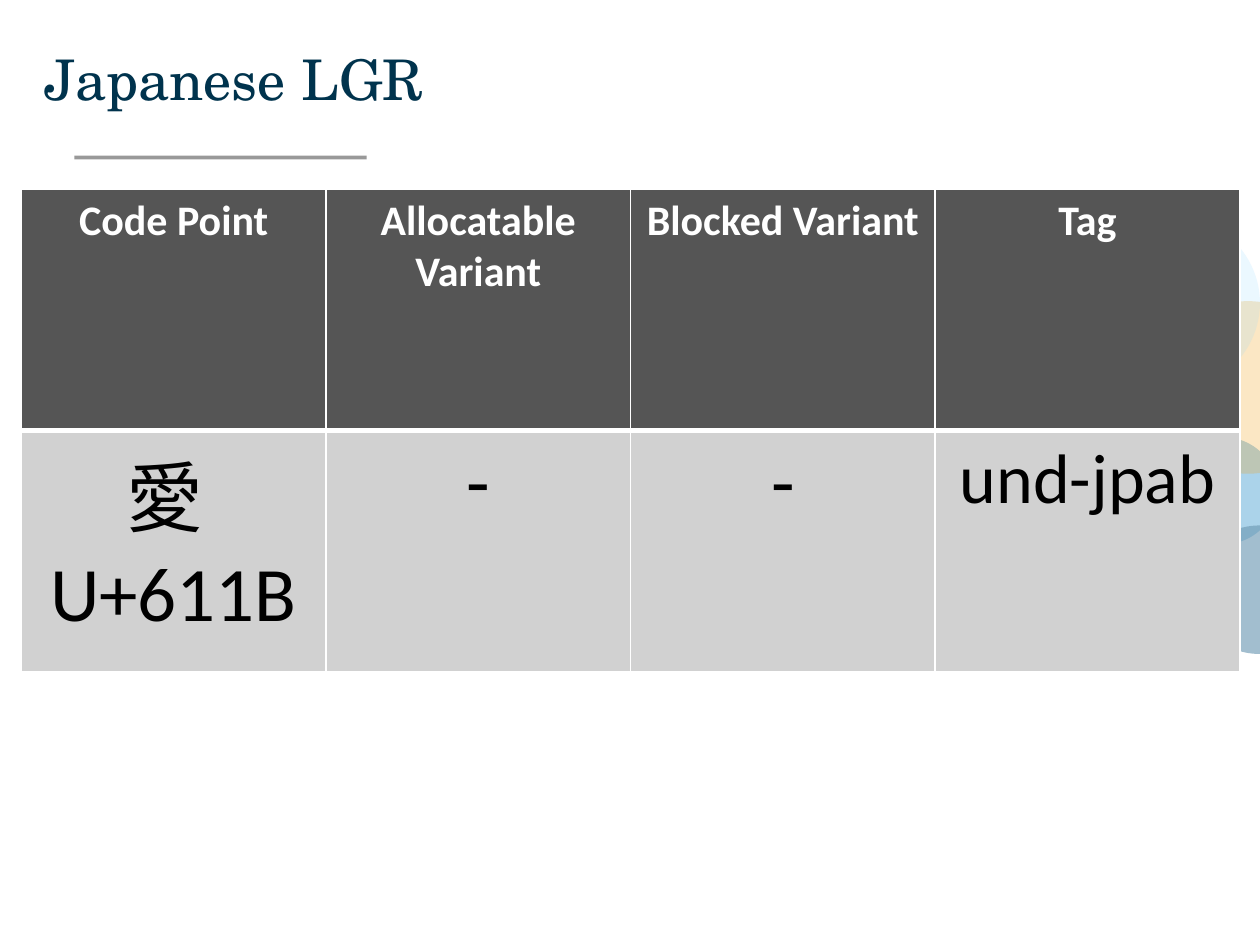
from pptx import Presentation
from pptx.dml.color import RGBColor
from pptx.enum.shapes import MSO_CONNECTOR, MSO_SHAPE
from pptx.enum.text import MSO_ANCHOR, PP_ALIGN
from pptx.oxml.ns import qn
from pptx.util import Inches, Pt
from lxml.etree import SubElement

HEADERS = ["Code Point", "Allocatable Variant", "Blocked Variant", "Tag"]
ENTRIES = [("愛 \nU+611B", 44), ("-", 44), ("-", 44), ("und-jpab", 40)]
CIRCLES = [
    (9.28, 3.47, 0.86, 0.85, "037BC0", 33),
    (9.47, 4.17, 1.05, 1.02, "6D99B3", 63),
    (9.22, 2.39, 1.37, 1.37, "F1A31E", 26),
    (8.63, 1.72, 1.37, 1.37, "93DAFF", 18),
]


def paint(color, value, alpha=100):
    """Set a colour format from a hex string and an opacity in percent."""
    color.rgb = RGBColor.from_string(value)
    if alpha < 100:
        clr = color._xFill.find(qn("a:srgbClr"))
        SubElement(clr, qn("a:alpha"), val=str(alpha * 1000))


def write(tf, text, size, color, font="Calibri", bold=False, align=PP_ALIGN.LEFT):
    """Write one paragraph per line of text in a single format."""
    for i, line in enumerate(text.split("\n")):
        p = tf.add_paragraph() if i else tf.paragraphs[0]
        p.alignment = align
        r = p.add_run()
        r.text = line
        r.font.size, r.font.name, r.font.bold = Pt(size), font, bold
        paint(r.font.color, color)


def add_rule(s, left, right, top):
    """Draw the grey rule under the title."""
    c = s.shapes.add_connector(
        MSO_CONNECTOR.STRAIGHT, Inches(left), Inches(top), Inches(right), Inches(top))
    c.line.width = Pt(2)
    c.line.fill.solid()
    paint(c.line.fill.fore_color, "555555")
    clr = c._element.spPr.find(".//" + qn("a:srgbClr"))
    SubElement(clr, qn("a:alpha"), val="60000")
    SubElement(c._element.spPr, qn("a:effectLst"))


def add_circle(s, left, top, width, height, color, alpha):
    """Draw a translucent circle of the right-hand decoration."""
    sp = s.shapes.add_shape(
        MSO_SHAPE.OVAL, Inches(left), Inches(top), Inches(width), Inches(height))
    sp.shadow.inherit = False
    sp.line.fill.background()
    sp.fill.solid()
    sp.fill.fore_color.rgb = RGBColor.from_string(color)
    clr = sp._element.spPr.find(".//" + qn("a:srgbClr"))
    SubElement(clr, qn("a:alpha"), val=str(alpha * 1000))


def add_title(s, text):
    """Place the slide title."""
    tf = s.shapes.add_textbox(Inches(0.16), Inches(0.33), Inches(5.62), Inches(0.67)).text_frame
    tf.word_wrap = True
    tf.vertical_anchor = MSO_ANCHOR.TOP
    tf.margin_left = tf.margin_right = Inches(0.04)
    tf.margin_top = tf.margin_bottom = Inches(0.02)
    write(tf, text, 32, "00334D", font="TeX Gyre Schola")
    tf.paragraphs[0]._p.get_or_add_pPr().set("marL", str(Inches(0.15)))


def fill_cell(cell, fill, top, bottom):
    """Fill a cell and give it white borders, with top and bottom widths in points."""
    tcPr = cell._tc.get_or_add_tcPr()
    for side, width in zip("LRTB", (1, 1, top, bottom)):
        ln = SubElement(tcPr, qn(f"a:ln{side}"), w=str(Pt(width)))
        SubElement(SubElement(ln, qn("a:solidFill")), qn("a:srgbClr"), val="FFFFFF")
    cell.fill.solid()
    paint(cell.fill.fore_color, fill)


def add_code_table(s):
    """Build the table of code points, variants and tags."""
    table = s.shapes.add_table(
        2, len(HEADERS), Inches(0.17), Inches(1.5), Inches(9.67), Inches(3.83)).table
    for col, (header, (entry, size)) in enumerate(zip(HEADERS, ENTRIES)):
        head, body = table.cell(0, col), table.cell(1, col)
        fill_cell(head, "555555", 1, 3)
        fill_cell(body, "D1D1D1", 3, 1)
        write(head.text_frame, header, 24, "FFFFFF", bold=True, align=PP_ALIGN.CENTER)
        write(body.text_frame, entry, size, "000000", align=PP_ALIGN.CENTER)


def main():
    """Build and save the slide."""
    prs = Presentation()
    prs.slide_width, prs.slide_height = Inches(10), Inches(7.5)
    s = prs.slides.add_slide(prs.slide_layouts[6])
    add_rule(s, 0.59, 2.91, 1.25)
    for circle in CIRCLES:
        add_circle(s, *circle)
    add_title(s, "Japanese LGR")
    add_code_table(s)
    prs.save("out.pptx")


if __name__ == "__main__":
    main()
